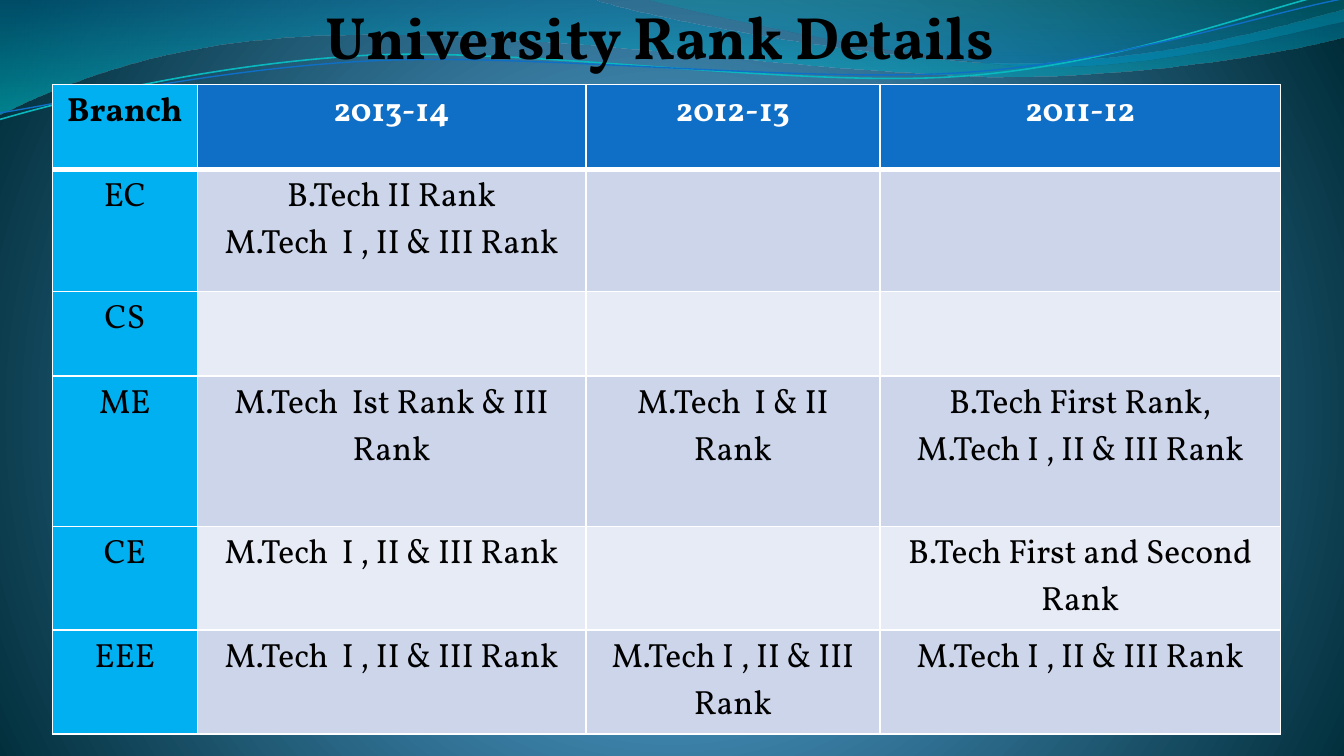
import math
from dataclasses import dataclass

from lxml import etree
from pptx import Presentation
from pptx import util as u
from pptx.dml.color import RGBColor
from pptx.enum import text
from pptx.oxml import ns, parse_xml


@dataclass(frozen=True)
class Theme:
    font: str = "Vollkorn"
    title_size: int = 32
    table_size: int = 18
    dark: str = "000000"
    light: str = "FFFFFF"
    branch: str = "00B0F0"
    header: str = "0F6FC6"
    bands: tuple = ("CCD5EA", "E7EBF5")
    # Gradient stops: position %, colour, opacity %
    background: tuple = ((0, "4AA0D6", 100), (25, "4C98C7", 100), (100, "002C38", 100))
    wide_wave: tuple = ((0, "0074A1", 45), (100, "00C6CF", 55))
    right_wave: tuple = ((0, "00A1A9", 30), (80, "008BBF", 45))
    upper_line: str = "0AB8BF"
    lower_line: str = "0F6FC6"


THEME = Theme()
LINEAR_DOWN = '<a:lin ang="5400000" scaled="1"/>'
RADIAL = ('<a:path path="circle">'
          '<a:fillToRect l="10000" t="110000" r="10000" b="100000"/></a:path>')
LINE_TILT = -2.7

# Outlines in inches: 2 numbers are a line end, 6 are a Bezier segment
WIDE_WAVE = [(0, 0), (4.4, -0.01), (4.76, 0.13, 6.64, 0.47, 7.58, 0.47),
             (8.53, 0.47, 9.58, 0.19, 10, 0.07), (10.01, 0.27),
             (9.83, 0.33, 8.7, 0.57, 7.46, 0.57), (6.22, 0.56, 3.82, 0.21, 2.57, 0.26),
             (1.29, 0.27, 0.46, 0.62, -0.01, 0.85)]
RIGHT_WAVE = [(4.79, -0.01), (5.09, 0.08, 6.82, 0.46, 7.69, 0.49),
              (8.56, 0.52, 9.61, 0.24, 10, 0.16), (10, 0)]
UPPER_LINE = [(0, 0.89), (0.48, 0.75, 1.58, 0.47, 2.77, 0.41),
              (3.96, 0.36, 5.92, 0.65, 7.12, 0.57), (8.33, 0.49, 9.39, 0.06, 9.98, -0.07)]
LOWER_LINE = [(0, 0.84), (0.47, 0.77, 1.64, 0.5, 2.83, 0.45),
              (4.03, 0.4, 5.97, 0.62, 7.17, 0.54), (8.36, 0.46, 9.41, 0.1, 10, -0.01)]

COLUMNS = (2.74, 7.34, 5.56, 7.57)
ROWS = (1.6, 2.31, 1.6, 2.84, 1.96, 1.96)
RANKS = [
    ("Branch", "2013-14", "2012-13", "2011-12"),
    ("EC", "B.Tech II Rank\nM.Tech  I , II & III Rank", "", ""),
    ("CS", "", "", ""),
    ("ME", "M.Tech  Ist Rank & III Rank", "M.Tech  I & II Rank",
     "B.Tech First Rank,\nM.Tech I , II & III Rank"),
    ("CE", "M.Tech  I , II & III Rank", "", "B.Tech First and Second Rank"),
    ("EEE", "M.Tech  I , II & III Rank", "M.Tech I , II & III Rank",
     "M.Tech I , II & III Rank"),
]


def set_gradient(fill, parent, stops, direction):
    """Give the fill held by parent a gradient with opacity."""
    fill.solid()
    marks = "".join(
        f'<a:gs pos="{position * 1000}"><a:srgbClr val="{color}">'
        f'<a:alpha val="{opacity * 1000}"/></a:srgbClr></a:gs>'
        for position, color, opacity in stops)
    gradient = parse_xml(f'<a:gradFill {ns.nsdecls("a")} rotWithShape="1">'
                         f'<a:gsLst>{marks}</a:gsLst>{direction}</a:gradFill>')
    parent.replace(parent.find(ns.qn("a:solidFill")), gradient)


def turn(point, degrees, center):
    angle = math.radians(degrees)
    x, y = point[0] - center[0], point[1] - center[1]
    return (center[0] + x * math.cos(angle) - y * math.sin(angle),
            center[1] + x * math.sin(angle) + y * math.cos(angle))


def add_outline(slide, outline, closed, tilt=0):
    """Draw the outline; its points already include the tilt."""
    points = [segment[i:i + 2] for segment in outline for i in range(0, len(segment), 2)]
    center = [(min(values) + max(values)) / 2 for values in zip(*points)]
    start, *others = [tuple(value * 1000 for value in turn(point, -tilt, center))
                      for point in points]
    builder = slide.shapes.build_freeform(*start, scale=u.Cm(2.54) / 1000)
    builder.add_line_segments(others, close=closed)
    shape = builder.convert_to_shape()
    shape.rotation = tilt
    shape.shadow.inherit = False

    # Join each three points of a Bezier segment into one curve
    lines = iter(shape.element.xpath(".//a:lnTo"))
    for segment in outline[1:]:
        first = next(lines)
        if len(segment) == 6:
            curve = etree.Element(ns.qn("a:cubicBezTo"))
            first.addprevious(curve)
            for line in (first, next(lines), next(lines)):
                curve.append(line[0])
                line.getparent().remove(line)
    return shape


def add_wave(slide, outline, stops):
    shape = add_outline(slide, outline, True)
    shape.line.fill.background()
    set_gradient(shape.fill, shape.element.spPr, stops, LINEAR_DOWN)


def add_wave_line(slide, outline, color, width):
    shape = add_outline(slide, outline, False, LINE_TILT)
    shape.fill.background()
    shape.line.color.rgb = RGBColor.from_string(color)
    shape.line.width = u.Pt(width)


def write(frame, content, size, color, bold):
    for index, line in enumerate(content.split("\n")):
        paragraph = frame.add_paragraph() if index else frame.paragraphs[0]
        paragraph.alignment = text.PP_ALIGN.CENTER
        run = paragraph.add_run()
        run.text = line
        run.font.name = THEME.font
        run.font.size = u.Pt(size)
        run.font.bold = bold
        run.font.color.rgb = RGBColor.from_string(color)


def add_title(slide, content):
    box = slide.shapes.add_textbox(u.Cm(1.7), 0, u.Cm(21.59), u.Cm(1.27))
    frame = box.text_frame
    frame.word_wrap = True
    frame.vertical_anchor = text.MSO_ANCHOR.TOP
    frame.margin_left = frame.margin_top = frame.margin_bottom = 0
    frame.margin_right = u.Cm(0.05)
    write(frame, content, THEME.title_size, THEME.dark, True)


def set_borders(cell, widths):
    properties = cell._tc.get_or_add_tcPr()
    for index, (side, width) in enumerate(widths.items()):
        border = parse_xml(
            f'<a:ln{side} {ns.nsdecls("a")} w="{u.Pt(width)}"><a:solidFill>'
            f'<a:srgbClr val="{THEME.light}"/></a:solidFill></a:ln{side}>')
        properties.insert(index, border)


def add_rank_table(slide):
    frame = slide.shapes.add_table(len(ROWS), len(COLUMNS), u.Cm(0.99), u.Cm(1.6),
                                   u.Cm(sum(COLUMNS)), u.Cm(sum(ROWS)))
    table = frame.table
    table.horz_banding = False
    for column, width in zip(table.columns, COLUMNS):
        column.width = u.Cm(width)
    for r, (row, height) in enumerate(zip(table.rows, ROWS)):
        row.height = u.Cm(height)
        for c, cell in enumerate(row.cells):
            is_header, is_branch = r == 0, c == 0
            color = THEME.light if is_header and not is_branch else THEME.dark
            fill = (THEME.branch if is_branch else
                    THEME.header if is_header else THEME.bands[(r - 1) % 2])
            cell.fill.solid()
            cell.fill.fore_color.rgb = RGBColor.from_string(fill)
            cell.margin_top = cell.margin_bottom = u.Cm(0.1)
            set_borders(cell, {"L": 1, "R": 1, "T": 3 if r == 1 else 1,
                               "B": 3 if is_header else 1})
            if RANKS[r][c]:
                write(cell.text_frame, RANKS[r][c], THEME.table_size, color, is_header)


def main():
    presentation = Presentation()
    presentation.slide_width = u.Cm(25.4)
    presentation.slide_height = u.Cm(14.29)
    slide = presentation.slides.add_slide(presentation.slide_layouts[6])

    # Background and waves
    fill = slide.background.fill
    fill.solid()
    holder = slide.element.xpath(".//p:bgPr")[0]
    set_gradient(fill, holder, THEME.background, RADIAL)
    add_wave(slide, WIDE_WAVE, THEME.wide_wave)
    add_wave(slide, RIGHT_WAVE, THEME.right_wave)
    add_wave_line(slide, UPPER_LINE, THEME.upper_line, 0.85)
    add_wave_line(slide, LOWER_LINE, THEME.lower_line, 0.75)

    # Title and table
    add_title(slide, "University Rank Details")
    add_rank_table(slide)

    presentation.save("out.pptx")


if __name__ == "__main__":
    main()
